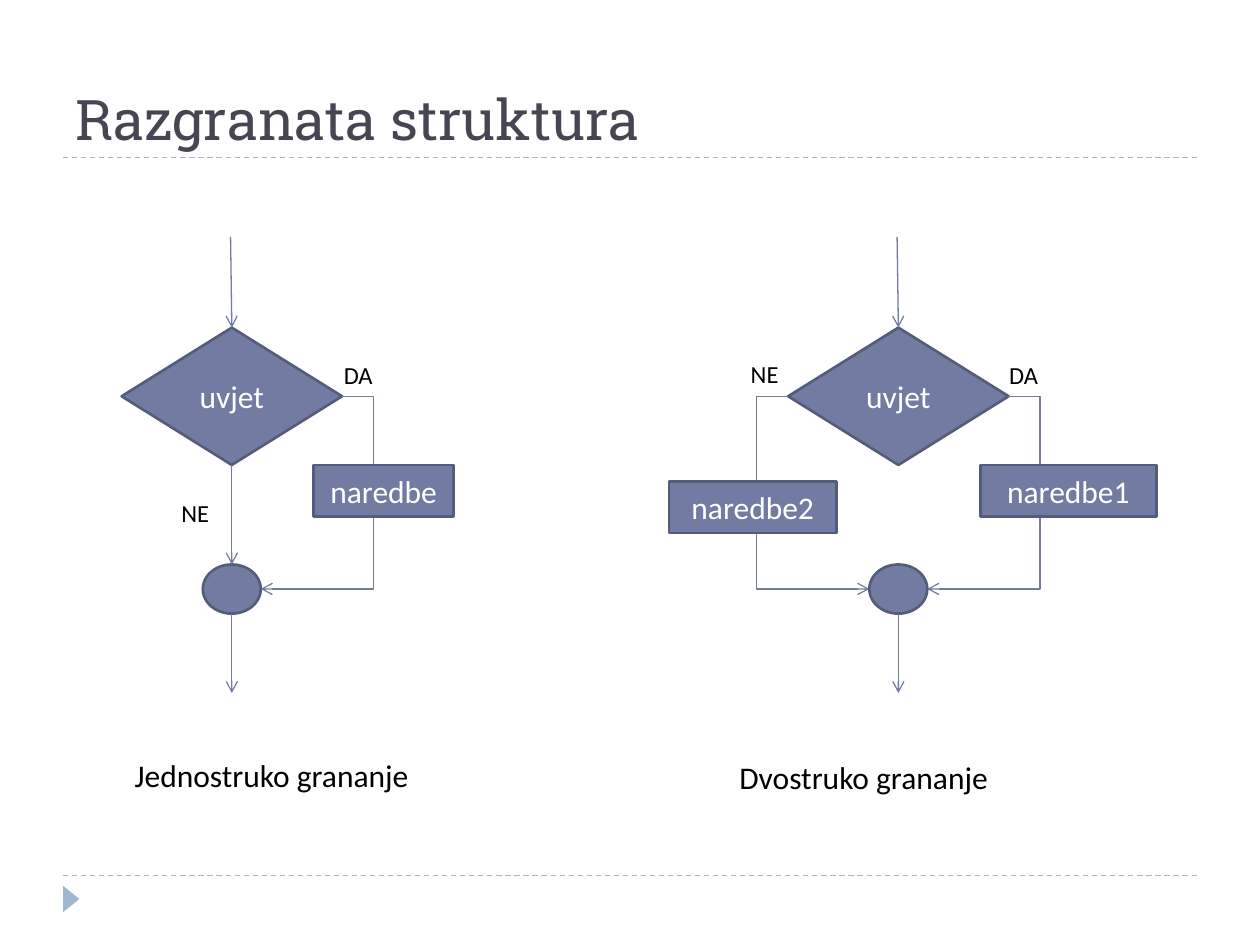
from lxml import etree
from pptx import Presentation
from pptx.dml.color import RGBColor
from pptx.enum import dml, shapes, text
from pptx.oxml.ns import qn
from pptx.util import Inches, Pt

THEME = {
    "fill": "727CA3", "edge": "545C79", "rule": "9FB8CD",
    "title": "464653", "light": "FFFFFF", "dark": "000000",
    "head": "Roboto Slab", "body": "Calibri",
    "big": 32, "mid": 18, "small": 14, "thin": 0.75, "bold": 1.5,
}
TITLE = "Razgranata struktura"
RULES = [6.95, 1.25]

# axis: centre of the chart; sides: +1 right, -1 left
# boxes: text, left, top, width; notes: text, left, top
CHARTS = [
    {"axis": 1.84, "sides": [1], "direct": True,
     "boxes": [("naredbe", 2.49, 3.69, 1.11)],
     "notes": [("DA", 2.63, 2.81), ("NE", 1.34, 3.9)],
     "name": ("Jednostruko grananje", 0.97, 5.95)},
    {"axis": 7.13, "sides": [1, -1], "direct": False,
     "boxes": [("naredbe1", 7.78, 3.69, 1.4), ("naredbe2", 5.31, 3.82, 1.33)],
     "notes": [("DA", 7.91, 2.81), ("NE", 5.86, 2.8)],
     "name": ("Dvostruko grananje", 5.77, 5.97)},
]
START, END = 1.88, 5.5
TEST = (2.6, 1.75, 1.09)  # top, width, height
JOIN = (4.48, 0.46, 0.39)
BOX_H, BEND = 0.41, 0.25

KIND = shapes.MSO_SHAPE
LINK = shapes.MSO_CONNECTOR


def color(key):
    return RGBColor.from_string(THEME[key])


def write(frame, words, size, ink, face="body", align=None):
    frame.word_wrap = True
    para = frame.paragraphs[0]
    para.text = words
    para.alignment = align
    font = para.font
    font.name, font.size = THEME[face], Pt(THEME[size])
    font.color.rgb = color(ink)


def label(slide, words, box, size, ink="dark", face="body", anchor="TOP"):
    frame = slide.shapes.add_textbox(*map(Inches, box)).text_frame
    write(frame, words, size, ink, face)
    frame.vertical_anchor = text.MSO_ANCHOR[anchor]


def block(slide, kind, box, words="", fill="fill", edge="edge"):
    shape = slide.shapes.add_shape(kind, *map(Inches, box))
    shape.shadow.inherit = False
    shape.fill.solid()
    shape.fill.fore_color.rgb = color(fill)
    if edge:
        shape.line.color.rgb = color(edge)
        shape.line.width = Pt(THEME["bold"])
    else:
        shape.line.fill.background()
    if words:
        write(shape.text_frame, words, "mid", "light",
              align=text.PP_ALIGN.CENTER)
        shape.text_frame.vertical_anchor = text.MSO_ANCHOR.MIDDLE
    return shape


def link(slide, start, end, ink="fill", kind=LINK.STRAIGHT, arrow=True):
    line = slide.shapes.add_connector(kind, *map(Inches, start + end))
    line.line.color.rgb = color(ink)
    line.line.width = Pt(THEME["thin"])
    props = line._element.spPr
    if arrow:
        etree.SubElement(line.line._get_or_add_ln(), qn("a:tailEnd"), type="arrow")
    etree.SubElement(props, qn("a:effectLst"))
    return line


def branch(slide, start, end):
    """Elbow that swings outward by BEND before it comes back to the join."""
    line = link(slide, start, end, kind=LINK.ELBOW)
    geom = line._element.spPr.find(qn("a:prstGeom"))
    vals = geom.find(qn("a:avLst"))
    if vals is None:
        vals = etree.SubElement(geom, qn("a:avLst"))
    ratio = -round(BEND / abs(end[0] - start[0]) * 100000)
    etree.SubElement(vals, qn("a:gd"), name="adj1", fmla=f"val {ratio}")


def flow(slide, chart):
    axis = chart["axis"]
    top, wide, high = TEST
    low, span, tall = JOIN
    block(slide, KIND.DIAMOND, (axis - wide / 2, top, wide, high), "uvjet")
    for side in chart["sides"]:
        branch(slide, (axis + side * wide / 2, top + high / 2),
               (axis + side * span / 2, low + tall / 2))
    block(slide, KIND.OVAL, (axis - span / 2, low, span, tall))
    for words, left, y in chart["notes"]:
        label(slide, words, (left, y, 0.99, 0.34), "small")
    link(slide, (axis - 0.01, START), (axis, top))
    link(slide, (axis, low + tall), (axis, END))
    if chart["direct"]:
        link(slide, (axis, top + high), (axis, low))
    for words, left, y, width in chart["boxes"]:
        block(slide, KIND.RECTANGLE, (left, y, width, BOX_H), words)
    words, left, y = chart["name"]
    label(slide, words, (left, y, 2.64, 0.4), "mid")


def main():
    deck = Presentation()
    deck.slide_width, deck.slide_height = Inches(10), Inches(7.5)
    slide = deck.slides.add_slide(deck.slide_layouts[6])
    for y in RULES:
        rule = link(slide, (0.5, y), (9.5, y), "rule", arrow=False)
        rule.line.dash_style = dml.MSO_LINE.DASH
    mark = block(slide, KIND.ISOSCELES_TRIANGLE, (0.46, 7.07, 0.21, 0.13),
                 fill="rule", edge=None)
    mark.rotation = 90
    label(slide, TITLE, (0.5, 0.17, 9, 1.08), "big", "title", "head", "BOTTOM")
    for chart in CHARTS:
        flow(slide, chart)
    deck.save("out.pptx")


if __name__ == "__main__":
    main()
